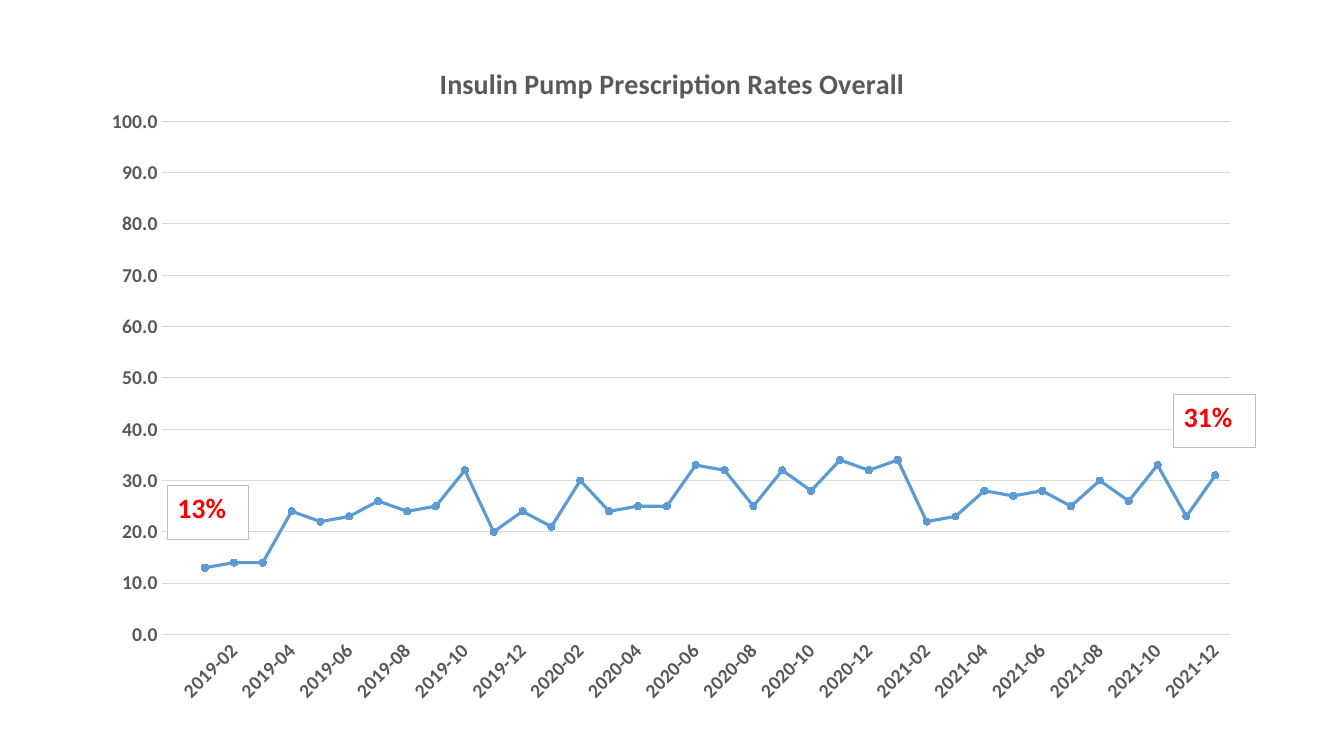
from dataclasses import dataclass

from lxml.etree import SubElement
from pptx import Presentation
from pptx.chart.axis import _BaseAxis
from pptx.chart.chart import Chart
from pptx.chart.data import CategoryChartData
from pptx.dml.color import RGBColor
from pptx.dml.line import LineFormat
from pptx.enum.chart import XL_CHART_TYPE, XL_MARKER_STYLE, XL_TICK_MARK
from pptx.enum.shapes import MSO_SHAPE
from pptx.enum.text import MSO_ANCHOR, PP_ALIGN
from pptx.oxml.ns import qn
from pptx.slide import Slide
from pptx.text.text import Font
from pptx.util import Inches, Pt


@dataclass(frozen=True)
class Theme:
    face: str = "Calibri"
    white: str = "FFFFFF"
    gray: str = "595959"
    grid: str = "D9D9D9"
    edge: str = "BDBDBD"
    blue: str = "5B9BD5"
    red: str = "FF0000"
    big: int = 20
    small: int = 14
    thin: float = 0.75
    thick: float = 2.25


@dataclass(frozen=True)
class Callout:
    text: str
    left: float
    top: float
    width: float = 0.81
    height: float = 0.53


THEME = Theme()
TITLE = "Insulin Pump Prescription Rates Overall"
MONTHS = [f"{year}-{month:02}" for year in (2019, 2020, 2021) for month in range(1, 13)]
RATES = [
    13, 14, 14, 24, 22, 23, 26, 24, 25, 32, 20, 24,
    21, 30, 24, 25, 25, 33, 32, 25, 32, 28, 34, 32,
    34, 22, 23, 28, 27, 28, 25, 30, 26, 33, 23, 31,
]
CALLOUTS = [Callout("13%", 1.66, 4.82), Callout("31%", 11.64, 3.91)]


def style(font: Font, size: int, color: str) -> None:
    form = {"name": THEME.face, "size": Pt(size), "bold": True}
    for key, value in form.items():
        setattr(font, key, value)
    font.color.rgb = RGBColor.from_string(color)


def stroke(line: LineFormat, color: str, width: float) -> None:
    line.color.rgb = RGBColor.from_string(color)
    line.width = Pt(width)


def layout(**parts: object):
    """Return a manual chart layout with the given settings."""
    root = SubElement(SubElement(THEME_ROOT, qn("c:layout")), qn("c:manualLayout"))
    for key, value in parts.items():
        SubElement(root, qn(f"c:{key}")).set("val", str(value))
    return root.getparent()


def place(owner, after: str | None, **parts: object) -> None:
    """Give a chart part a fixed position, right behind the named child."""
    for old in owner.findall(qn("c:layout")):
        owner.remove(old)
    node = SubElement(owner, qn("c:layout"))
    frame = SubElement(node, qn("c:manualLayout"))
    for key, value in parts.items():
        SubElement(frame, qn(f"c:{key}")).set("val", str(value))
    spot = 0 if after is None else owner.index(owner.find(qn(after))) + 1
    owner.insert(spot, node)


def set_axis(axis: _BaseAxis) -> None:
    form = {"major_tick_mark": XL_TICK_MARK.NONE, "minor_tick_mark": XL_TICK_MARK.NONE}
    for key, value in form.items():
        setattr(axis, key, value)
    style(axis.tick_labels.font, THEME.small, THEME.gray)


def set_title(chart: Chart) -> None:
    chart.has_title = True
    title = chart.chart_title
    title.include_in_layout = False
    title.text_frame.text = TITLE
    style(title.text_frame.paragraphs[0].runs[0].font, THEME.big, THEME.gray)
    place(title._element, "c:tx", xMode="edge", yMode="edge", x=0.3, y=0.04)


def add_rates(slide: Slide) -> None:
    data = CategoryChartData(number_format="0.0")
    data.categories = ["", *MONTHS]
    data.add_series("Series 1", [None, *RATES])
    chart = slide.shapes.add_chart(
        XL_CHART_TYPE.LINE_MARKERS,
        Inches(0.78), Inches(0.31), Inches(11.77), Inches(6.88), data,
    ).chart
    chart.has_legend = False
    chart.font.name = THEME.face
    chart.font.size = Pt(10)
    set_title(chart)

    # Plot area
    plot = chart.plots[0]
    plot.vary_by_categories = False
    area = chart._chartSpace.chart.plotArea
    place(area, None, layoutTarget="inner", xMode="edge", yMode="edge",
          x=0.07, y=0.13, w=0.9, h=0.74)

    # Month axis: slanted labels, every second month
    months = chart.category_axis
    set_axis(months)
    months.has_major_gridlines = False
    stroke(months.format.line, THEME.grid, THEME.thin)
    node = months._element
    node.find(qn("c:txPr")).find(qn("a:bodyPr")).set("rot", "-2700000")
    skip = SubElement(node, qn("c:tickLblSkip"))
    skip.set("val", "2")
    node.find(qn("c:lblOffset")).addnext(skip)

    # Rate axis
    rates = chart.value_axis
    set_axis(rates)
    form = {"minimum_scale": 0, "maximum_scale": 100, "major_unit": 10}
    for key, value in form.items():
        setattr(rates, key, value)
    rates.tick_labels.number_format = "0.0"
    rates.tick_labels.number_format_is_linked = False
    rates.format.line.fill.background()
    stroke(rates.major_gridlines.format.line, THEME.grid, THEME.thin)

    # Line and markers
    line = plot.series[0]
    line.smooth = False
    stroke(line.format.line, THEME.blue, THEME.thick)
    mark = line.marker
    mark.style = XL_MARKER_STYLE.CIRCLE
    mark.size = 5
    mark.format.fill.solid()
    mark.format.fill.fore_color.rgb = RGBColor.from_string(THEME.blue)
    stroke(mark.format.line, THEME.blue, THEME.thin)


def add_callout(slide: Slide, note: Callout) -> None:
    box = slide.shapes.add_shape(
        MSO_SHAPE.RECTANGLE, Inches(note.left), Inches(note.top),
        Inches(note.width), Inches(note.height),
    )
    box.shadow.inherit = False
    box.fill.solid()
    box.fill.fore_color.rgb = RGBColor.from_string(THEME.white)
    stroke(box.line, THEME.edge, THEME.thin)
    frame = box.text_frame
    form = {"text": note.text, "word_wrap": True, "vertical_anchor": MSO_ANCHOR.TOP}
    for key, value in form.items():
        setattr(frame, key, value)
    line = frame.paragraphs[0]
    line.alignment = PP_ALIGN.LEFT
    style(line.runs[0].font, THEME.big, THEME.red)


def main() -> None:
    deck = Presentation()
    deck.slide_width, deck.slide_height = Inches(13.33), Inches(7.5)
    slide = deck.slides.add_slide(deck.slide_layouts[6])
    add_rates(slide)
    for note in CALLOUTS:
        add_callout(slide, note)
    deck.save("out.pptx")


if __name__ == "__main__":
    main()
